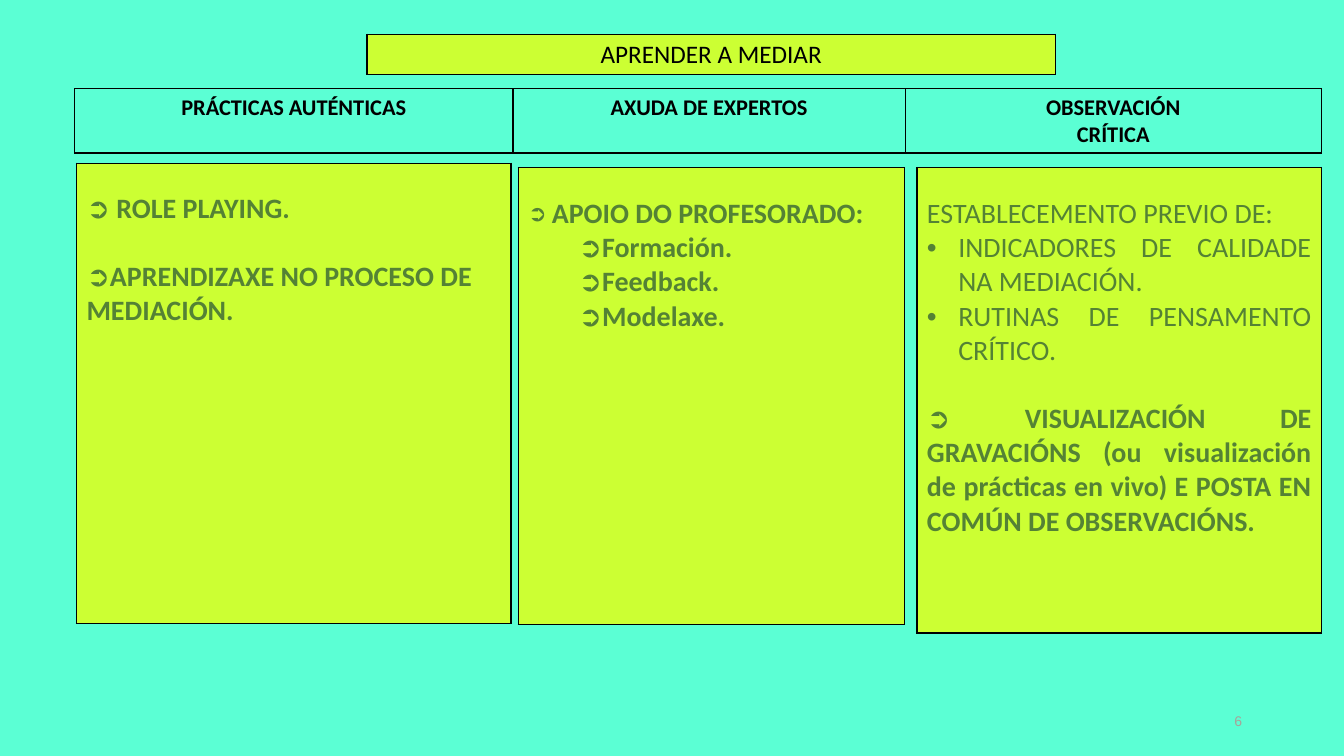
from dataclasses import dataclass

from lxml import etree
from pptx import Presentation
from pptx import util as u
from pptx.dml.color import RGBColor
from pptx.enum import text
from pptx.oxml.ns import qn

BLACK, LIME, GREEN, AQUA, GREY = "000000", "CCFF33", "548235", "5BFFD4", "A7A399"
LEFT, CENTER, JUSTIFY = text.PP_ALIGN.LEFT, text.PP_ALIGN.CENTER, text.PP_ALIGN.JUSTIFY
ARROW, DOT = "➲", "•"


@dataclass
class Line:
    words: str
    bullet: str = ""
    bold: bool = True
    level: int = 0
    margin: float = 0
    indent: float = 0
    before: float = 0
    lead_size: float = 0


def color(hex_code):
    return RGBColor.from_string(hex_code)


def style_font(font, size, hex_code, bold=False, name="Calibri"):
    font.name, font.size, font.bold = name, u.Pt(size), bold
    font.color.rgb = color(hex_code)


def add_bullet(paragraph, line):
    properties = paragraph._p.get_or_add_pPr()
    properties.set("marL", str(u.Cm(line.margin)))
    properties.set("indent", str(u.Cm(line.indent)))
    etree.SubElement(properties, qn("a:buFont"), typeface="Arial")
    etree.SubElement(properties, qn("a:buChar"), char=line.bullet)


def add_borders(cell):
    properties = cell._tc.get_or_add_tcPr()
    for side in "LRTB":
        border = etree.SubElement(properties, qn(f"a:ln{side}"), w=str(u.Pt(1)))
        fill = etree.SubElement(border, qn("a:solidFill"))
        etree.SubElement(fill, qn("a:srgbClr"), val=BLACK)


def write_lines(frame, lines, size, hex_code, align):
    for number, line in enumerate(lines):
        paragraph = frame.add_paragraph() if number else frame.paragraphs[0]
        paragraph.alignment = align
        paragraph.level = line.level
        if line.bullet:
            add_bullet(paragraph, line)
        if line.before:
            paragraph.space_before = u.Pt(line.before)
        style_font(paragraph.font, size, hex_code, line.bold)
        if line.lead_size:
            lead = paragraph.add_run()
            lead.text = " "
            lead.font.size = u.Pt(line.lead_size)
        paragraph.add_run().text = line.words


def add_row(slide, box, widths, cells, size, hex_code, align, fill=None, top=0.13):
    left, upper, height = box
    frame = slide.shapes.add_table(
        1, len(widths), u.Cm(left), u.Cm(upper), u.Cm(sum(widths)), u.Cm(height))
    table = frame.table
    table.first_row = table.horz_banding = False
    table.rows[0].height = u.Cm(height)
    for column, width, cell, lines in zip(table.columns, widths, table.rows[0].cells, cells):
        column.width = u.Cm(width)
        cell.margin_left = cell.margin_right = u.Cm(0.25)
        cell.margin_top, cell.margin_bottom = u.Cm(top), u.Cm(0.13)
        add_borders(cell)
        if fill:
            cell.fill.solid()
            cell.fill.fore_color.rgb = color(fill)
        else:
            cell.fill.background()
        write_lines(cell.text_frame, lines, size, hex_code, align)


def add_title(slide, box, width):
    add_row(slide, box, [width], [[Line("APRENDER A MEDIAR", bold=False)]],
            18, BLACK, CENTER, LIME)


def add_headings(slide, box, widths):
    headings = [["PRÁCTICAS AUTÉNTICAS"], ["AXUDA DE EXPERTOS"], ["OBSERVACIÓN", "CRÍTICA"]]
    add_row(slide, box, widths, [[Line(words) for words in cell] for cell in headings],
            16, BLACK, CENTER)


def add_panel(slide, box, width, lines, align):
    add_row(slide, box, [width], [lines], 20, GREEN, align, LIME, top=0.73)


def add_slide_number(slide, left, top, width, height):
    shape = slide.shapes.add_textbox(u.Cm(left), u.Cm(top), u.Cm(width), u.Cm(height))
    frame = shape.text_frame
    frame.word_wrap = True
    frame.vertical_anchor = text.MSO_ANCHOR.MIDDLE
    paragraph = frame.paragraphs[0]
    paragraph.alignment = text.PP_ALIGN.RIGHT
    style_font(paragraph.font, 10, GREY, name="Arial")
    paragraph.add_run().text = "6"


def main():
    presentation = Presentation()
    presentation.slide_width, presentation.slide_height = u.Cm(33.87), u.Cm(19.05)
    slide = presentation.slides.add_slide(presentation.slide_layouts[6])
    slide.background.fill.solid()
    slide.background.fill.fore_color.rgb = color(AQUA)

    practices = [
        Line(" ROLE PLAYING.", ARROW),
        Line("APRENDIZAXE NO PROCESO DE MEDIACIÓN.", ARROW, before=24),
    ]
    support = [Line("APOIO DO PROFESORADO:", ARROW, lead_size=16)] + [
        Line(words, ARROW, level=1, margin=1.27)
        for words in ("Formación.", "Feedback.", "Modelaxe.")
    ]
    observation = [Line("ESTABLECEMENTO PREVIO DE: ", bold=False)] + [
        Line(words, DOT, bold=False, margin=0.79, indent=-0.79)
        for words in ("INDICADORES DE CALIDADE NA MEDIACIÓN.", "RUTINAS DE PENSAMENTO CRÍTICO.")
    ] + [
        Line(" VISUALIZACIÓN DE GRAVACIÓNS (ou visualización de prácticas en vivo) "
             "E POSTA EN COMÚN DE OBSERVACIÓNS.", ARROW, before=24),
    ]

    add_slide_number(slide, 23.93, 17.65, 7.62, 1.02)
    add_title(slide, (9.25, 0.86, 1.02), 17.35)
    add_headings(slide, (1.88, 2.24, 1.6), [11.05, 9.88, 10.49])
    add_panel(slide, (1.93, 4.11, 11.61), 10.95, practices, LEFT)
    add_panel(slide, (13.06, 4.22, 11.51), 9.73, support, JUSTIFY)
    add_panel(slide, (23.11, 4.22, 11.73), 10.19, observation, JUSTIFY)
    presentation.save("out.pptx")


if __name__ == "__main__":
    main()
